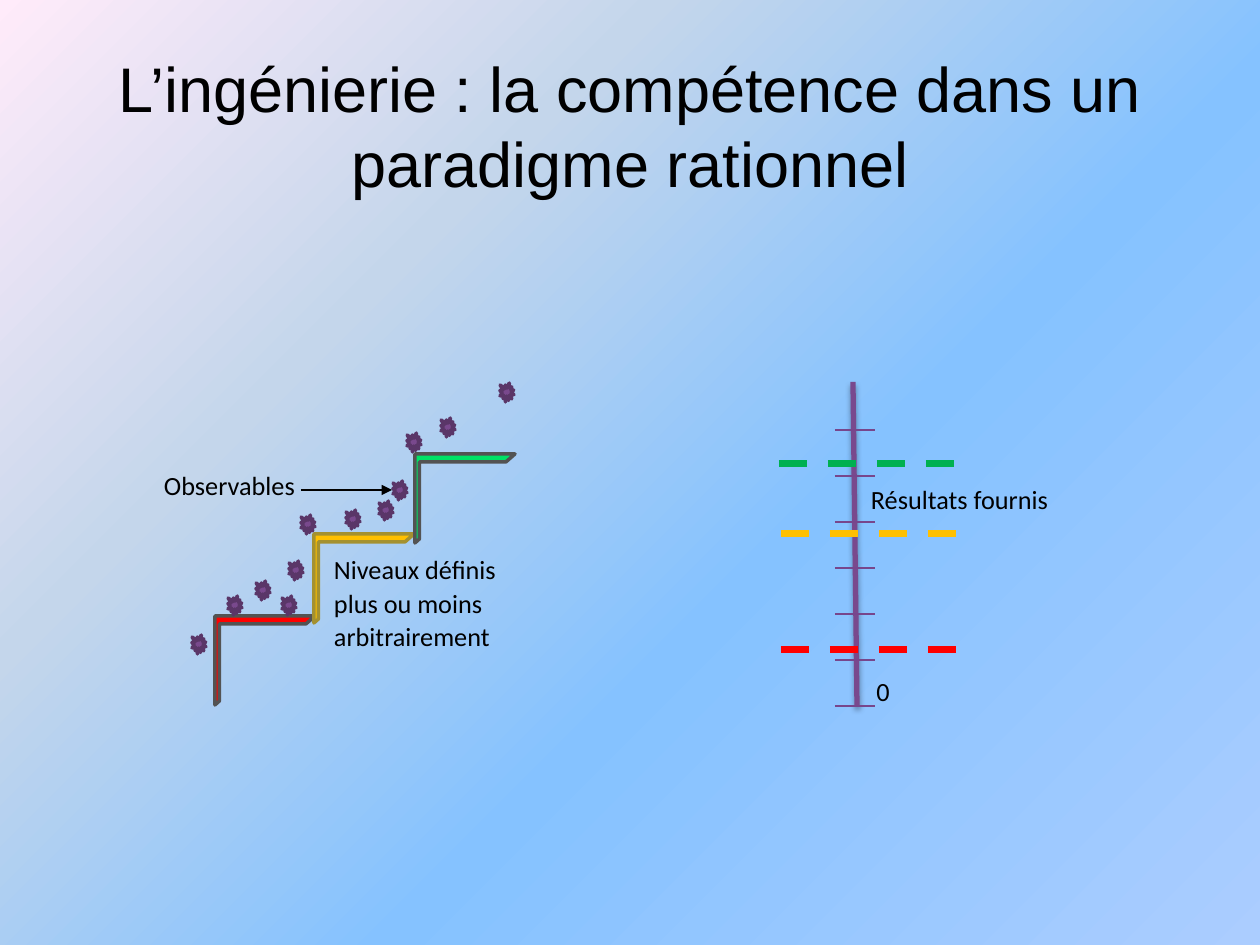
from dataclasses import dataclass

from lxml.etree import SubElement
from pptx import Presentation
from pptx.dml.color import RGBColor
from pptx.enum.dml import MSO_LINE
from pptx.enum.shapes import MSO_CONNECTOR, MSO_SHAPE
from pptx.enum.text import MSO_ANCHOR, MSO_AUTO_SIZE, PP_ALIGN
from pptx.oxml import parse_xml
from pptx.oxml.ns import nsdecls, qn
from pptx.shapes.autoshape import Shape
from pptx.shapes.connector import Connector
from pptx.shapes.group import GroupShape
from pptx.slide import Slide
from pptx.util import Emu, Pt

PX = 914400 / 126
BLACK = "000000"
STOPS = ((0, "ABCDFF"), (40, "85C2FF"), (70, "C4D6EB"), (100, "FFEBFA"))


@dataclass
class Step:
    """A stair step with its fill and outline."""
    x: int
    y: int
    fill: str
    edge: str


@dataclass
class Label:
    """A text label and its box."""
    text: str
    x: int
    y: int
    w: int
    h: int
    align: PP_ALIGN = PP_ALIGN.LEFT


@dataclass
class Level:
    """A dashed result level on the scale."""
    x: int
    y: int
    color: str


STEPS = (
    Step(215, 616, "FF0000", "535353"),
    Step(314, 534, "FFC000", "A49130"),
    Step(415, 454, "00E266", "535353"),
)
SEALS = (
    (192, 635), (289, 561), (407, 433), (301, 515), (393, 481), (346, 510),
    (500, 383), (441, 418), (282, 596), (228, 596), (256, 581), (379, 501),
)
STAIR_LABELS = (
    Label("Observables", 155, 462, 159, 52),
    Label("Niveaux définis plus ou moins arbitrairement", 325, 546, 222, 152),
)
SCALE_LABELS = (
    Label("Résultats fournis", 862, 476, 267, 59),
    Label("0", 862, 668, 42, 55, PP_ALIGN.CENTER),
)
LEVELS = (
    Level(779, 464, "00B050"),
    Level(781, 534, "FFC000"),
    Level(781, 650, "FF0000"),
)


def px(n: int) -> Emu:
    """Turn pixels into EMU."""
    return Emu(round(n * PX))


def rgb(color: str) -> RGBColor:
    """Turn a hex string into a colour."""
    return RGBColor.from_string(color)


def paint_background(s: Slide) -> None:
    """Give the slide a radial gradient centred on its lower right corner."""
    stops = "".join(
        f'<a:gs pos="{pos * 1000}"><a:srgbClr val="{color}"/></a:gs>' for pos, color in STOPS
    )
    s._element.cSld.insert(0, parse_xml(
        f'<p:bg {nsdecls("p", "a")}><p:bgPr><a:gradFill rotWithShape="1">'
        f'<a:gsLst>{stops}</a:gsLst><a:path path="circle">'
        '<a:fillToRect l="100000" t="100000"/></a:path></a:gradFill>'
        '<a:effectLst/></p:bgPr></p:bg>'
    ))


def set_title(s: Slide, text: str) -> None:
    """Place and format the title."""
    sp = s.shapes.title
    sp.left, sp.top, sp.width, sp.height = px(21), px(52), px(1218), px(146)
    tf = sp.text_frame
    tf.text = text
    tf.auto_size = MSO_AUTO_SIZE.NONE
    tf.vertical_anchor = MSO_ANCHOR.MIDDLE
    p = tf.paragraphs[0]
    p.alignment = PP_ALIGN.CENTER
    font = p.runs[0].font
    font.name, font.size, font.color.rgb = "Arial", Pt(36), rgb(BLACK)


def add_shape(grp: GroupShape, kind: MSO_SHAPE, box: tuple[int, int, int, int],
              fill: str, edge: str) -> Shape:
    """Add a filled and outlined shape."""
    sp = grp.shapes.add_shape(kind, *map(px, box))
    sp.shadow.inherit = False
    sp.fill.solid()
    sp.fill.fore_color.rgb = rgb(fill)
    sp.line.color.rgb = rgb(edge)
    sp.line.width = Pt(2)
    return sp


def add_step(grp: GroupShape, step: Step) -> None:
    """Add one stair step."""
    sp = add_shape(grp, MSO_SHAPE.HALF_FRAME, (step.x, step.y, 100, 89), step.fill, step.edge)
    sp.adjustments[0], sp.adjustments[1] = 0.09, 0.05


def add_label(grp: GroupShape, label: Label) -> None:
    """Add a text label."""
    tf = grp.shapes.add_textbox(px(label.x), px(label.y), px(label.w), px(label.h)).text_frame
    tf.word_wrap = True
    tf.margin_left = tf.margin_right = px(9)
    tf.margin_top = tf.margin_bottom = px(5)
    tf.text = label.text
    p = tf.paragraphs[0]
    p.alignment, p.line_spacing, p.space_after = label.align, 1.07, Pt(6)
    font = p.runs[0].font
    font.name, font.size, font.color.rgb = "Calibri", Pt(15), rgb(BLACK)


def add_line(grp: GroupShape, ends: tuple[int, int, int, int], color: str,
             width: float) -> Connector:
    """Add a straight line without a shadow."""
    ln = grp.shapes.add_connector(MSO_CONNECTOR.STRAIGHT, *map(px, ends))
    ln.line.color.rgb = rgb(color)
    ln.line.width = Pt(width)
    SubElement(ln._element.spPr, qn("a:effectLst"))
    return ln


def add_axis(grp: GroupShape) -> None:
    """Add the scale axis with its soft shadow."""
    ln = add_line(grp, (853, 382, 857, 706), "79498D", 3)
    effects = ln._element.spPr.find(qn("a:effectLst"))
    effects.append(parse_xml(
        f'<a:outerShdw {nsdecls("a")} blurRad="{Pt(3.1)}" dist="{Pt(1.8)}" dir="5400000" '
        f'rotWithShape="0"><a:srgbClr val="{BLACK}"><a:alpha val="35000"/></a:srgbClr>'
        '</a:outerShdw>'
    ))


def draw_stairs(s: Slide) -> None:
    """Draw the stairs, the observables and their labels."""
    grp = s.shapes.add_group_shape()
    for step in STEPS:
        add_step(grp, step)
    for x, y in SEALS:
        add_shape(grp, MSO_SHAPE.EXPLOSION1, (x, y, 14, 19), "79498D", "5A3668")
    for label in STAIR_LABELS:
        add_label(grp, label)
    arrow = add_line(grp, (301, 490, 392, 490), BLACK, 0.75)
    SubElement(arrow.line._get_or_add_ln(), qn("a:tailEnd"), type="triangle")


def draw_scale(s: Slide) -> None:
    """Draw the graduated scale with its result levels."""
    grp = s.shapes.add_group_shape()
    for label in SCALE_LABELS:
        add_label(grp, label)
    add_axis(grp)
    for y in range(706, 429, -46):
        add_line(grp, (835, y, 875, y), "77468C", 0.75)
    for level in LEVELS:
        ln = add_line(grp, (level.x, level.y, level.x + 175, level.y), level.color, 4)
        ln.line.dash_style = MSO_LINE.DASH


def main() -> None:
    """Build and save the slide."""
    prs = Presentation()
    prs.slide_width, prs.slide_height = px(1260), px(945)
    s = prs.slides.add_slide(prs.slide_layouts[5])
    paint_background(s)
    set_title(s, "L’ingénierie : la compétence dans un paradigme rationnel")
    draw_stairs(s)
    draw_scale(s)
    prs.save("out.pptx")


if __name__ == "__main__":
    main()
